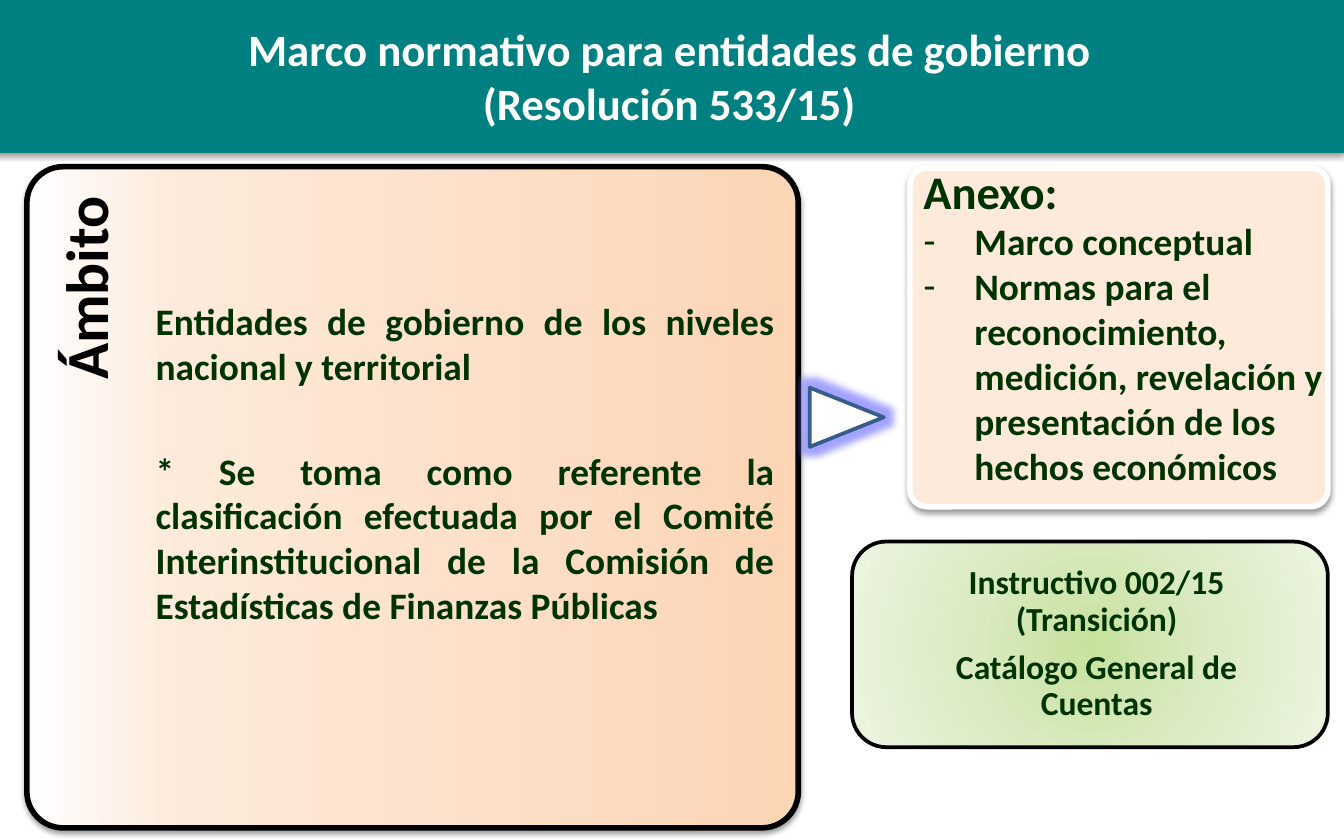
import pptx
import pptx.util
import pptx.dml.color
import pptx.enum.shapes
import pptx.enum.text
import pptx.oxml
import pptx.oxml.ns

Inches, Pt = pptx.util.Inches, pptx.util.Pt
SHAPE = pptx.enum.shapes.MSO_SHAPE
ALIGN = pptx.enum.text.PP_ALIGN
ANCHOR = pptx.enum.text.MSO_ANCHOR

COLORS = {
    "teal": "008080", "white": "FFFFFF", "black": "000000",
    "green": "003300", "peach": "FDEADA", "orange": "FCD5B5",
    "blue": "385D8A", "glow": "6666FF",
    "leaf": "C7E29E", "leaf_mid": "DBEBC4", "leaf_pale": "EDF5E2",
}
NS = pptx.oxml.ns.nsdecls("a")


def color(name):
    return pptx.dml.color.RGBColor.from_string(COLORS[name])


def add_effect(shape, inner):
    """Give the shape a shadow or a glow."""
    shape.shadow.inherit = False
    effects = shape._element.spPr.find(pptx.oxml.ns.qn("a:effectLst"))
    effects.append(pptx.oxml.parse_xml(inner))


def add_shadow(shape):
    add_effect(shape, f'<a:outerShdw {NS} blurRad="{Pt(3.1)}" dist="{Pt(1.6)}" '
               f'dir="5400000" rotWithShape="0"><a:srgbClr val="{COLORS["black"]}">'
               '<a:alpha val="38000"/></a:srgbClr></a:outerShdw>')


def set_gradient(shape, stops, direction):
    marks = "".join(f'<a:gs pos="{place * 1000}"><a:srgbClr val="{COLORS[name]}"/></a:gs>'
                    for place, name in stops)
    shape._element.spPr.insert(2, pptx.oxml.parse_xml(
        f'<a:gradFill {NS} rotWithShape="1"><a:gsLst>{marks}</a:gsLst>{direction}</a:gradFill>'))


def add_panel(page, kind, box, fill=None, line=None, width=0):
    shape = page.shapes.add_shape(kind, *map(Inches, box))
    shape.shadow.inherit = False
    if fill:
        shape.fill.solid()
        shape.fill.fore_color.rgb = color(fill)
    if line:
        shape.line.color.rgb = color(line)
        shape.line.width = Pt(width)
    else:
        shape.line.fill.background()
    return shape


def place(shape, box):
    shape.left, shape.top, shape.width, shape.height = map(Inches, box)


def add_text_box(page, box):
    shape = page.shapes.add_textbox(*map(Inches, box))
    shape.text_frame.word_wrap = True
    return shape


def add_para(frame, text, size, name="green", align=ALIGN.LEFT, first=False):
    para = frame.paragraphs[0] if first else frame.add_paragraph()
    para.alignment = align
    para.space_before = Pt(0)
    add_span(para, text, size, name)
    return para


def add_span(para, text, size, name):
    span = para.add_run()
    span.text = text
    span.font.name = "Calibri"
    span.font.size = Pt(size)
    span.font.bold = True
    span.font.color.rgb = color(name)


def set_bullet(para, mark=None):
    """Hanging dash, or no bullet at all."""
    props = para._p.get_or_add_pPr()
    hang = Inches(0.38) if mark else 0
    props.set("marL", str(hang))
    props.set("indent", str(-hang))
    bullet = f'<a:buChar {NS} char="{mark}"/>' if mark else f"<a:buNone {NS}/>"
    props.append(pptx.oxml.parse_xml(bullet))


def build_header(page, box):
    add_shadow(add_panel(page, SHAPE.RECTANGLE, box, "teal"))
    title = page.shapes.title
    place(title, box)
    page.shapes._spTree.append(title._element)
    frame = title.text_frame
    frame.vertical_anchor = ANCHOR.MIDDLE
    para = add_para(frame, "Marco normativo para entidades de gobierno", 24,
                    "white", ALIGN.CENTER, True)
    para.add_line_break()
    add_span(para, "(Resolución 533/15)", 24, "white")


def build_scope(page, box):
    left, top, width, height = box
    panel = add_panel(page, SHAPE.ROUNDED_RECTANGLE, box, line="black", width=3)
    panel.adjustments[0] = 0.055
    set_gradient(panel, [(0, "white"), (20, "peach"), (100, "orange")],
                 '<a:lin ang="0" scaled="0"/>')
    add_shadow(panel)

    # Upright heading
    wide, high = 1.6, 0.54
    heading = add_text_box(page, (left + 0.43 - wide / 2, top + 0.92 - high / 2, wide, high))
    heading.rotation = 270
    frame = heading.text_frame
    frame.margin_top = frame.margin_bottom = 0
    add_para(frame, "Ámbito", 32, "black", ALIGN.RIGHT, True)

    # Statement and its note
    frame = add_text_box(page, (left + 0.86, top + 0.93, 4.8, 2.59)).text_frame
    add_para(frame, "Entidades de gobierno de los niveles nacional y territorial",
             20, align=ALIGN.JUSTIFY, first=True)
    note = add_para(frame, "* Se toma como referente la clasificación efectuada por el Comité "
                    "Interinstitucional de la Comisión de Estadísticas de Finanzas Públicas",
                    20, align=ALIGN.JUSTIFY)
    note.space_before = Pt(32)


def build_arrow(page, box):
    arrow = add_panel(page, SHAPE.FLOWCHART_EXTRACT, box, "white", "blue", 2)
    arrow.rotation = 90
    add_effect(arrow, f'<a:glow {NS} rad="{Inches(0.11)}"><a:srgbClr val="{COLORS["glow"]}">'
               '<a:alpha val="60000"/></a:srgbClr></a:glow>')


def build_annex(page, box):
    left, top, width, height = box
    card = add_panel(page, SHAPE.ROUNDED_RECTANGLE, box, "peach", "white", 3)
    card.adjustments[0] = 0.05
    add_shadow(card)

    body = page.placeholders[1]
    place(body, (left, top - 0.09, 3.27, 2.83))
    page.shapes._spTree.append(body._element)
    frame = body.text_frame
    frame.auto_size = pptx.enum.text.MSO_AUTO_SIZE.NONE
    frame.vertical_anchor = ANCHOR.TOP
    set_bullet(add_para(frame, "Anexo:", 25, first=True))
    for text in ("Marco conceptual",
                 "Normas para el reconocimiento, medición, revelación y "
                 "presentación de los hechos económicos"):
        set_bullet(add_para(frame, text, 20), "-")


def build_instructions(page, box):
    card = add_panel(page, SHAPE.FLOWCHART_ALTERNATE_PROCESS, box, line="black", width=2)
    set_gradient(card, [(0, "leaf"), (50, "leaf_mid"), (100, "leaf_pale")],
                 '<a:path path="circle"><a:fillToRect l="50000" t="50000" '
                 'r="50000" b="50000"/></a:path>')
    frame = card.text_frame
    frame.word_wrap = True
    frame.vertical_anchor = ANCHOR.MIDDLE
    frame.margin_left, frame.margin_right = Inches(0.62), Inches(0.52)
    for index, text in enumerate(("Instructivo 002/15 (Transición)",
                                  "Catálogo General de Cuentas")):
        para = add_para(frame, text, 18, align=ALIGN.CENTER, first=index == 0)
        para.line_spacing = 0.9
        para.space_after = Pt(6.3)


def main():
    deck = pptx.Presentation()
    deck.slide_width, deck.slide_height = Inches(10), Inches(6.25)
    page = deck.slides.add_slide(deck.slide_layouts[1])
    build_header(page, (-0.04, -0.02, 10.04, 1.16))
    build_scope(page, (0.2, 1.24, 5.74, 4.92))
    build_annex(page, (6.77, 1.25, 3.11, 2.52))
    build_arrow(page, (6.08, 2.83, 0.44, 0.55))
    build_instructions(page, (6.34, 4.03, 3.54, 1.53))
    deck.save("out.pptx")


if __name__ == "__main__":
    main()
